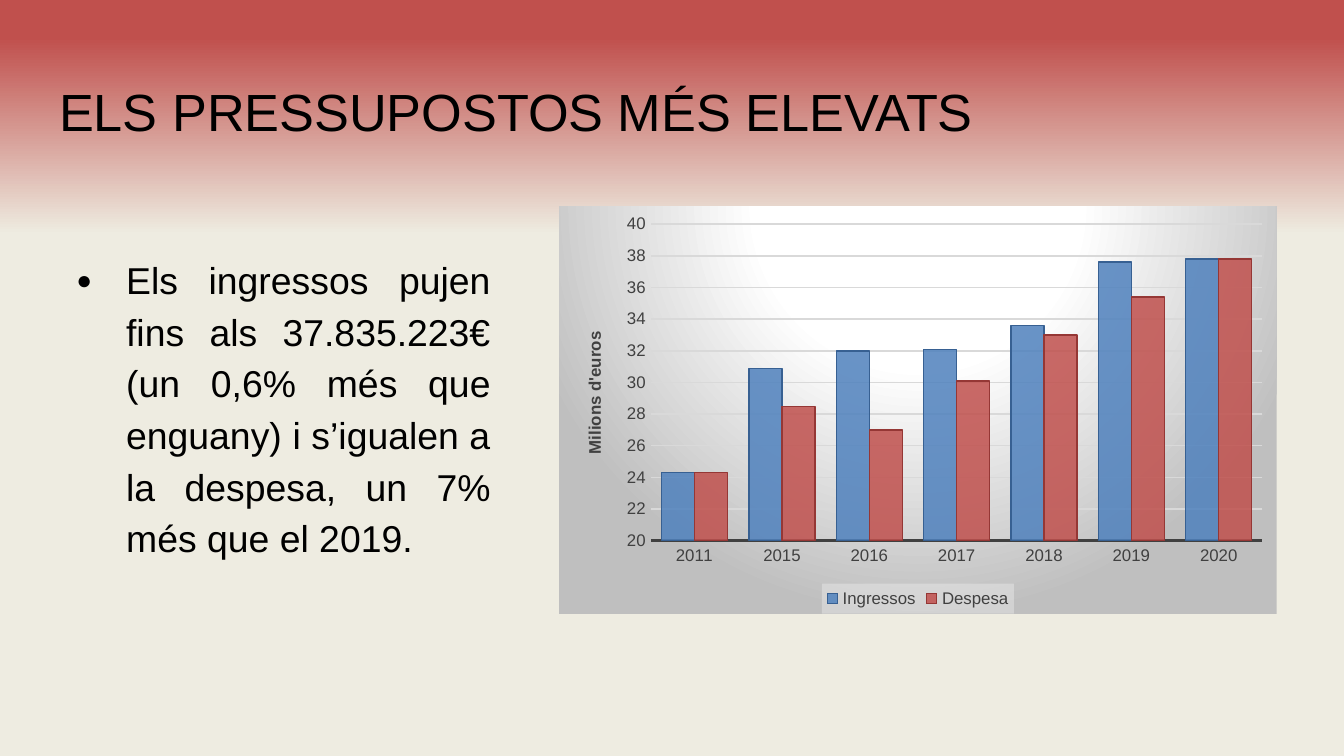
from lxml import etree
from pptx import Presentation
from pptx import util as u
from pptx.chart import data
from pptx.dml.color import RGBColor
from pptx.enum import chart as ch
from pptx.enum import text
from pptx.oxml import parse_xml
from pptx.oxml.ns import nsdecls, qn

BLACK = RGBColor(0x00, 0x00, 0x00)
GREY = RGBColor(0x40, 0x40, 0x40)
GRID = RGBColor(0xD9, 0xD9, 0xD9)
RED = RGBColor(0xC0, 0x50, 0x4D)
RED_EDGE = RGBColor(0x95, 0x37, 0x35)
BLUE = RGBColor(0x4F, 0x81, 0xBD)
BLUE_EDGE = RGBColor(0x37, 0x60, 0x92)
CREAM = RGBColor(0xEE, 0xEC, 0xE1)
PALE = RGBColor(0xF2, 0xF2, 0xF2)
WHITE = RGBColor(0xFF, 0xFF, 0xFF)
SILVER = RGBColor(0xBF, 0xBF, 0xBF)

YEARS = ["2011", "2015", "2016", "2017", "2018", "2019", "2020"]
SERIES = [
    ("Ingressos", [24.3, 30.9, 32, 32.1, 33.6, 37.6, 37.8], BLUE, BLUE_EDGE),
    ("Despesa", [24.3, 28.5, 27, 30.1, 33, 35.4, 37.8], RED, RED_EDGE),
]


class BudgetSlide:
    """Styled slide whose elements are placed by shares of its size."""

    font_name = "Arial"

    def __init__(self, deck):
        self.deck = deck
        self.page = deck.slides.add_slide(deck.slide_layouts[5])

    def area(self, left, top, width, height):
        wide, high = self.deck.slide_width, self.deck.slide_height
        return int(left * wide), int(top * high), int(width * wide), int(height * high)

    def style(self, font, size, color, bold=False):
        font.name, font.size, font.bold = self.font_name, u.Pt(size), bold
        font.color.rgb = color

    def frame(self, box):
        frame = box.text_frame
        frame.word_wrap = True
        frame.auto_size = text.MSO_AUTO_SIZE.NONE
        frame.vertical_anchor = text.MSO_ANCHOR.TOP
        frame.margin_left = frame.margin_right = u.Inches(0.1)
        frame.margin_top = frame.margin_bottom = u.Inches(0.1)
        return frame

    def background(self, stops):
        fill = self.page.background.fill
        fill.gradient()
        fill.gradient_angle = 270
        for stop, (position, color) in zip(fill.gradient_stops, stops):
            stop.position, stop.color.rgb = position, color

    def title(self, words, *share):
        box = self.page.shapes.title
        box.left, box.top, box.width, box.height = self.area(*share)
        para = self.frame(box).paragraphs[0]
        para.text = words
        para.alignment = text.PP_ALIGN.LEFT
        self.style(para.font, 28, BLACK)

    def bullet(self, words, *share):
        box = self.page.shapes.add_textbox(*self.area(*share))
        para = self.frame(box).paragraphs[0]
        para.text = words
        para.alignment = text.PP_ALIGN.JUSTIFY
        para.line_spacing = 1.15
        props = para._p.get_or_add_pPr()
        props.set("marL", str(u.Inches(0.5)))
        props.set("indent", str(u.Inches(-0.37)))
        color = etree.SubElement(props, qn("a:buClr"))
        etree.SubElement(color, qn("a:srgbClr"), val=str(BLACK))
        etree.SubElement(props, qn("a:buSzPct"), val="70000")
        etree.SubElement(props, qn("a:buFont"), typeface=self.font_name)
        etree.SubElement(props, qn("a:buChar"), char="●")
        self.style(para.font, 20, BLACK)

    def place(self, parent, **values):
        layout = parent.find(qn("c:layout"))
        if layout is None:
            layout = etree.Element(qn("c:layout"))
            parent.insert(0, layout)
        manual = etree.SubElement(layout, qn("c:manualLayout"))
        for name, value in values.items():
            etree.SubElement(manual, qn(f"c:{name}"), val=str(value))

    def chart_fill(self, chart):
        stops = "".join(
            f'<a:gs pos="{share * 1000}"><a:srgbClr val="{color}"/></a:gs>'
            for share, color in [(0, WHITE), (39, WHITE), (100, SILVER)])
        fill = parse_xml(
            f'<c:spPr {nsdecls("c", "a")}><a:gradFill><a:gsLst>{stops}</a:gsLst>'
            '<a:path path="circle"><a:fillToRect l="50000" t="-80000" r="50000" b="180000"/>'
            '</a:path></a:gradFill><a:ln><a:noFill/></a:ln></c:spPr>')
        chart._chartSpace.find(qn("c:chart")).addnext(fill)

    def axes(self, chart, title):
        years, euros = chart.category_axis, chart.value_axis
        for axis in (years, euros):
            axis.major_tick_mark = axis.minor_tick_mark = ch.XL_TICK_MARK.NONE
            self.style(axis.tick_labels.font, 9, GREY)
        years.format.line.color.rgb = GREY
        years.format.line.width = u.Pt(1.5)
        euros.format.line.fill.background()
        euros.minimum_scale, euros.maximum_scale, euros.major_unit = 20, 40, 2
        line = euros.major_gridlines.format.line
        line.color.rgb, line.width = GRID, u.Pt(0.75)
        para = euros.axis_title.text_frame.paragraphs[0]
        para.text = title
        self.style(para.font, 9, GREY, bold=True)
        self.place(euros.axis_title._element,
                   xMode="edge", yMode="edge", x=0.03, y=0.3)

    def legend(self, chart):
        chart.has_legend = True
        legend = chart.legend
        legend.position = ch.XL_LEGEND_POSITION.BOTTOM
        legend.include_in_layout = False
        self.style(legend.font, 9, GREY)
        legend._element.find(qn("c:overlay")).addnext(parse_xml(
            f'<c:spPr {nsdecls("c", "a")}><a:solidFill><a:srgbClr val="{PALE}">'
            '<a:alpha val="39000"/></a:srgbClr></a:solidFill></c:spPr>'))

    def columns(self, years, rows, axis_title, *share):
        content = data.CategoryChartData()
        content.categories = years
        for name, values, *_ in rows:
            content.add_series(name, values)
        chart = self.page.shapes.add_chart(
            ch.XL_CHART_TYPE.COLUMN_CLUSTERED, *self.area(*share), content).chart
        chart.has_title = False
        self.style(chart.font, 10, BLACK)
        self.chart_fill(chart)
        plot = chart.plots[0]
        plot.gap_width, plot.overlap, plot.vary_by_categories = 65, 0, False
        for series, (_, _, color, edge) in zip(plot.series, rows):
            series.invert_if_negative = False
            series.format.fill.solid()
            series.format.fill.fore_color.rgb = color
            tint = series._element.xpath("c:spPr/a:solidFill/a:srgbClr")[0]
            etree.SubElement(tint, qn("a:alpha"), val="85000")
            series.format.line.color.rgb = edge
            series.format.line.width = u.Pt(0.75)
        self.axes(chart, axis_title)
        self.legend(chart)
        self.place(chart._chartSpace.find(".//" + qn("c:plotArea")),
                   layoutTarget="inner", xMode="edge", yMode="edge",
                   x=0.128, y=0.044, w=0.852, h=0.777)


def main():
    deck = Presentation()
    deck.slide_width = u.Inches(10)
    deck.slide_height = deck.slide_width * 9 // 16
    slide = BudgetSlide(deck)
    slide.background([(0.05, RED), (0.31, CREAM)])
    slide.bullet(
        "Els ingressos pujen fins als 37.835.223€ (un 0,6% més que enguany) "
        "i s’igualen a la despesa, un 7% més que el 2019.",
        0.034, 0.314, 0.341, 0.573)
    slide.title("ELS PRESSUPOSTOS MÉS ELEVATS", 0.034, 0.087, 0.932, 0.112)
    slide.columns(YEARS, SERIES, "Milions d'euros", 0.416, 0.273, 0.534, 0.539)
    deck.save("out.pptx")


if __name__ == "__main__":
    main()
